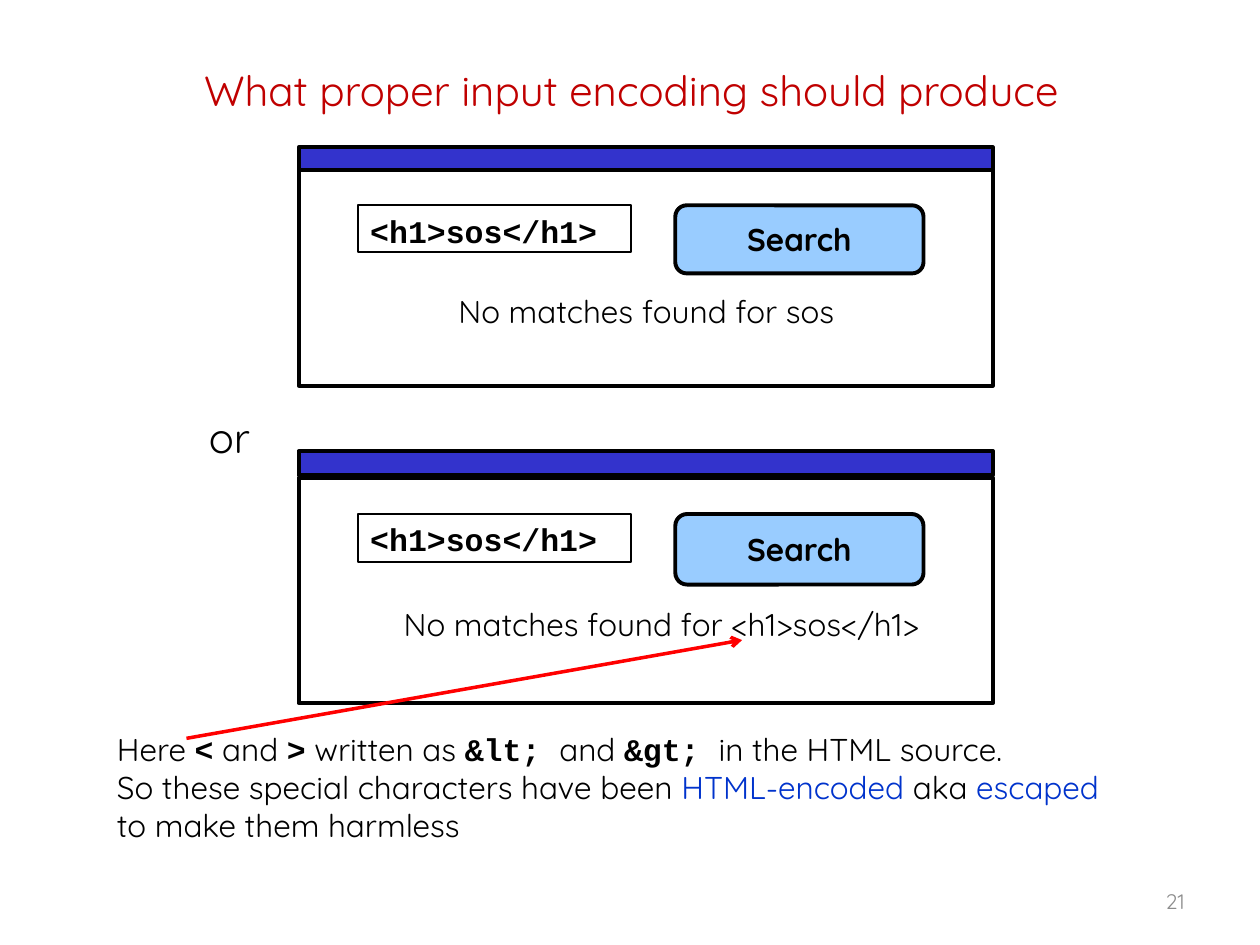
"""Build a slide showing what proper input encoding should produce."""
from dataclasses import dataclass

from lxml import etree
from pptx import Presentation
from pptx.dml.color import RGBColor
from pptx.enum.shapes import MSO_CONNECTOR, MSO_SHAPE
from pptx.enum.text import MSO_ANCHOR, PP_ALIGN
from pptx.oxml.ns import qn
from pptx.util import Inches, Pt

RECT, ROUNDED = MSO_SHAPE.RECTANGLE, MSO_SHAPE.ROUNDED_RECTANGLE
LEFT, CENTER, RIGHT = PP_ALIGN.LEFT, PP_ALIGN.CENTER, PP_ALIGN.RIGHT
TOP, MIDDLE = MSO_ANCHOR.TOP, MSO_ANCHOR.MIDDLE
STRAIGHT = MSO_CONNECTOR.STRAIGHT


@dataclass(frozen=True)
class Theme:
    font: str = "Quicksand"
    code_font: str = "Courier New"
    ink: str = "000000"
    title: str = "C00000"
    accent: str = "0033CC"
    muted: str = "8C8C8C"
    bar: str = "3333CC"
    button: str = "99CCFF"
    arrow: str = "FF0000"
    large: int = 24
    body: int = 18
    small: int = 12
    leading: float = 21.5
    frame_line: float = 2.25
    field_line: float = 1
    arrow_line: float = 2


THEME = Theme()
PLAIN = {}
CODE = {"font": THEME.code_font, "bold": True}
BOLD = {"bold": True}
ACCENT = {"color": THEME.accent}

TITLE = "What proper input encoding should produce"
ALTERNATIVE = "or"
PAGE_NUMBER = "21"
QUERY, BUTTON = "<h1>sos</h1>", "Search"
WINDOW_LEFT, WINDOW_WIDTH = 2.37, 5.51
WINDOWS = [
    {"bar": (1.17, 0.18), "pane": (1.34, 1.72), "field": (1.63, 0.37),
     "button": (1.63, 0.54), "reply_at": (3.4, 2.27, 3.46, 0.41),
     "reply": "No matches found for sos"},
    {"bar": (3.58, 0.19), "pane": (3.79, 1.79), "field": (4.08, 0.38),
     "button": (4.08, 0.56), "reply_at": (2.61, 4.75, 5.28, 0.41),
     "reply": "No matches found for <h1>sos</h1>"},
]
EXPLANATION = [
    [("Here ", PLAIN), ("<", CODE), (" and ", PLAIN), (">", CODE),
     (" written as ", PLAIN), ("&lt; ", CODE), ("and ", PLAIN),
     ("&gt; ", CODE), ("in the HTML source.", PLAIN)],
    [("So these special characters have been ", PLAIN),
     ("HTML-encoded ", ACCENT), ("aka", PLAIN), (" escaped ", ACCENT),
     ("to make them harmless", PLAIN)],
]
ARROW_FROM, ARROW_TO = (1.48, 5.86), (5.89, 5.08)


def inches(values):
    return [Inches(value) for value in values]


def write(shape, paragraphs, size=THEME.body, align=LEFT, anchor=TOP, leading=None):
    frame = shape.text_frame
    frame.word_wrap = True
    frame.vertical_anchor = anchor
    for index, runs in enumerate(paragraphs):
        paragraph = frame.add_paragraph() if index else frame.paragraphs[0]
        paragraph.alignment = align
        if leading:
            paragraph.line_spacing = Pt(leading)
        for text, style in runs:
            run = paragraph.add_run()
            run.text = text
            run.font.name = style.get("font", THEME.font)
            run.font.size = Pt(size)
            run.font.bold = style.get("bold", False)
            run.font.color.rgb = RGBColor.from_string(style.get("color", THEME.ink))


def add_text(shapes, box, paragraphs, **layout):
    write(shapes.add_textbox(*inches(box)), paragraphs, **layout)


def add_box(shapes, kind, box, fill=None, line=THEME.frame_line):
    shape = shapes.add_shape(kind, *inches(box))
    shape.shadow.inherit = False
    if fill:
        shape.fill.solid()
        shape.fill.fore_color.rgb = RGBColor.from_string(fill)
    else:
        shape.fill.background()
    shape.line.color.rgb = RGBColor.from_string(THEME.ink)
    shape.line.width = Pt(line)
    return shape


def add_window(slide, window):
    def place(left, width, part):
        top, height = window[part]
        return left, top, width, height

    shapes = slide.shapes.add_group_shape().shapes
    add_box(shapes, RECT, place(WINDOW_LEFT, WINDOW_WIDTH, "pane"))
    add_box(shapes, RECT, place(WINDOW_LEFT, WINDOW_WIDTH, "bar"), THEME.bar)
    field = add_box(shapes, RECT, place(2.84, 2.17, "field"), line=THEME.field_line)
    write(field, [[(QUERY, CODE)]])
    button = add_box(shapes, ROUNDED, place(5.36, 1.97, "button"), THEME.button)
    write(button, [[(BUTTON, BOLD)]], align=CENTER, anchor=MIDDLE)
    add_text(shapes, window["reply_at"], [[(window["reply"], PLAIN)]], align=CENTER)


def add_arrow(slide):
    arrow = slide.shapes.add_connector(STRAIGHT, *inches(ARROW_FROM + ARROW_TO))
    arrow.line.color.rgb = RGBColor.from_string(THEME.arrow)
    arrow.line.width = Pt(THEME.arrow_line)
    etree.SubElement(arrow.line._get_or_add_ln(), qn("a:tailEnd"), type="arrow")
    etree.SubElement(arrow._element.spPr, qn("a:effectLst"))


def main():
    prs = Presentation()
    prs.slide_width, prs.slide_height = Inches(10), Inches(7.5)
    slide = prs.slides.add_slide(prs.slide_layouts[5])

    title = slide.shapes.title
    title.left, title.top, title.width, title.height = inches((0.51, 0.21, 9, 1.01))
    write(title, [[(TITLE, {"color": THEME.title})]], THEME.large, CENTER, MIDDLE)

    for window in WINDOWS:
        add_window(slide, window)
    add_text(slide.shapes, (1.56, 3.22, 0.7, 0.52), [[(ALTERNATIVE, PLAIN)]],
             size=THEME.large)
    add_text(slide.shapes, (0.83, 5.75, 8.19, 1), EXPLANATION, leading=THEME.leading)
    add_text(slide.shapes, (7.17, 6.95, 2.33, 0.4),
             [[(PAGE_NUMBER, {"color": THEME.muted})]],
             size=THEME.small, align=RIGHT, anchor=MIDDLE)
    add_arrow(slide)
    prs.save("out.pptx")


if __name__ == "__main__":
    main()
